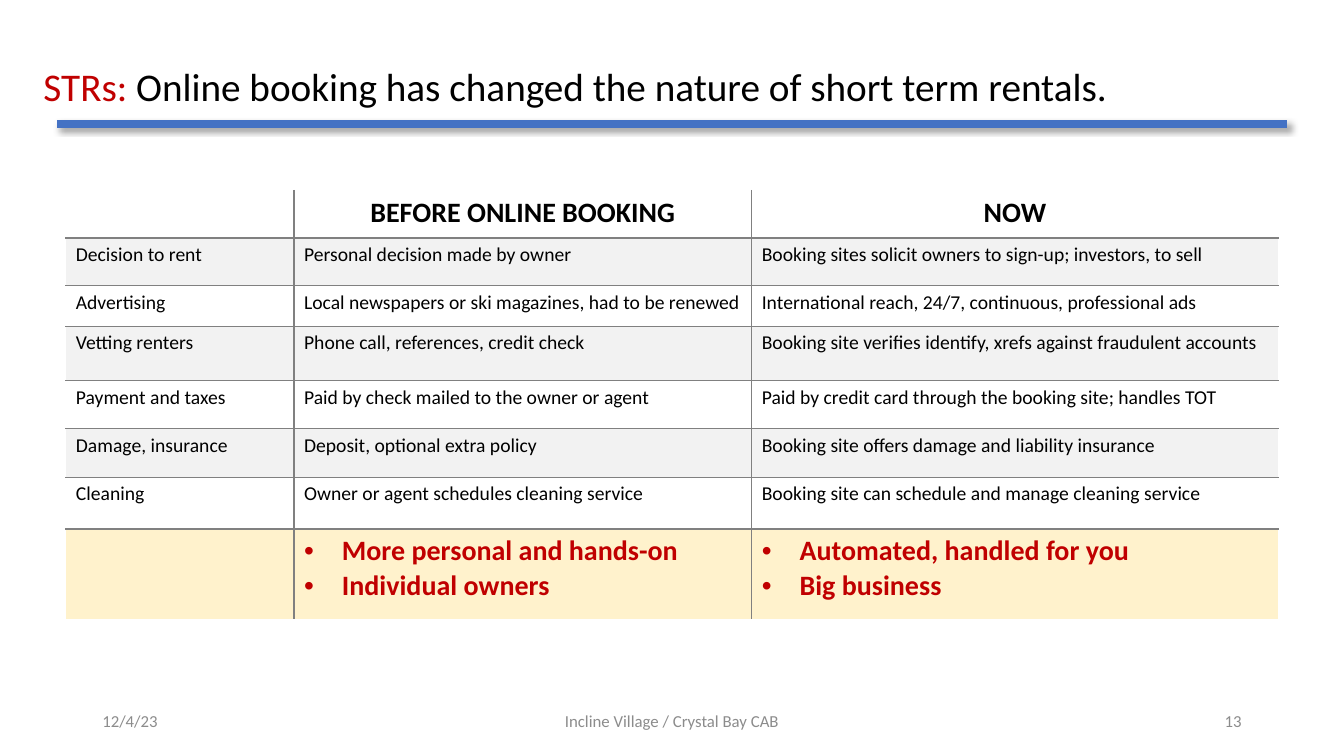
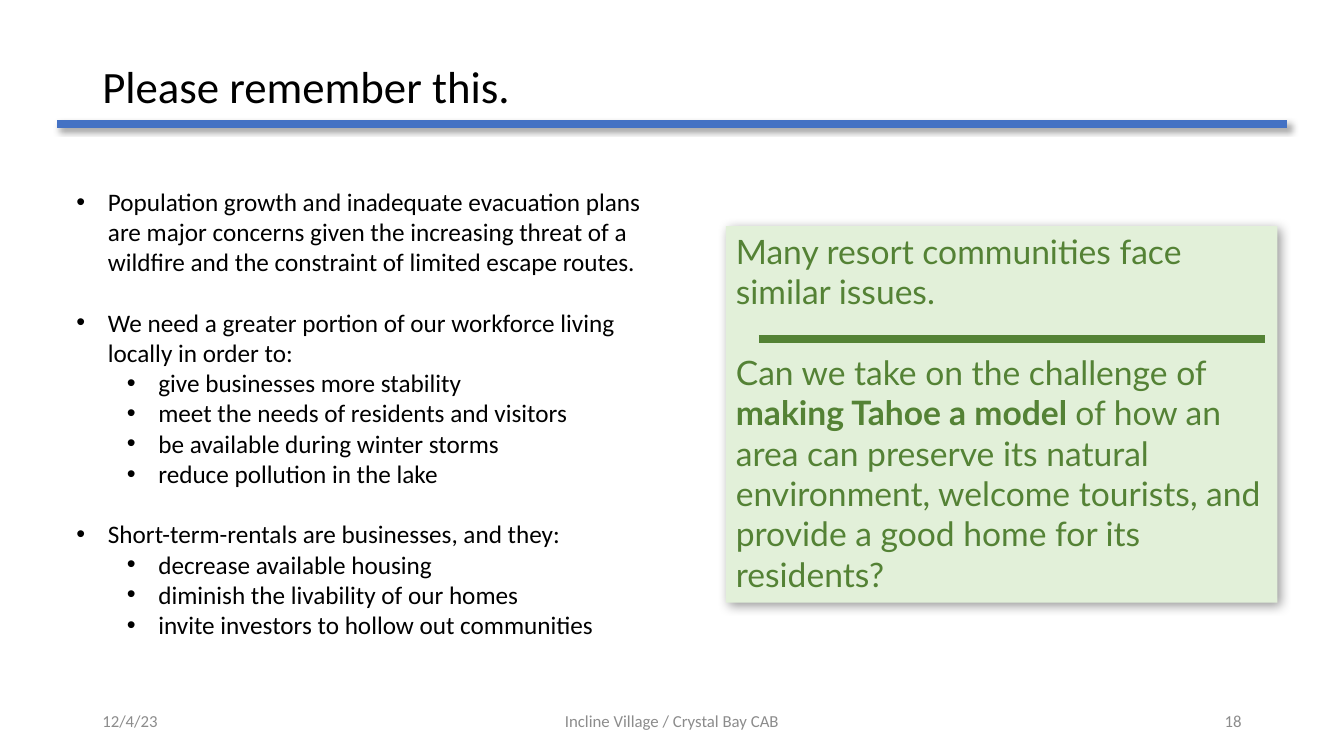
from lxml.etree import SubElement
from pptx import Presentation
from pptx.dml.color import RGBColor
from pptx.enum.shapes import MSO_CONNECTOR, MSO_SHAPE
from pptx.enum.text import MSO_ANCHOR, PP_ALIGN
from pptx.oxml.ns import qn
from pptx.util import Pt

COLOURS = {
    "text": "000000", "accent": "C00000", "rule": "4472C4", "footer": "8C8C8C",
    "grid": "808080", "white": "FFFFFF", "band": "F2F2F2", "summary": "FFF2CC",
    "panel": "E2F0D9", "green": "548235",
}
FOOTER_DATE = "12/4/23"
FOOTER_NAME = "Incline Village / Crystal Bay CAB"

COLUMN_WIDTHS = [163, 327, 376]
ROW_HEIGHTS = [34, 34, 29, 39, 34, 35, 37, 65]
COMPARISON = [
    ["", "BEFORE ONLINE BOOKING", "NOW"],
    ["Decision to rent", "Personal decision made by owner",
     "Booking sites solicit owners to sign-up; investors, to sell"],
    ["Advertising", "Local newspapers or ski magazines, had to be renewed",
     "International reach, 24/7, continuous, professional ads"],
    ["Vetting renters", "Phone call, references, credit check",
     "Booking site verifies identify, xrefs against fraudulent accounts"],
    ["Payment and taxes", "Paid by check mailed to the owner or agent",
     "Paid by credit card through the booking site; handles TOT"],
    ["Damage, insurance", "Deposit, optional extra policy",
     "Booking site offers damage and liability insurance"],
    ["Cleaning", "Owner or agent schedules cleaning service",
     "Booking site can schedule and manage cleaning service"],
    ["", "More personal and hands-on\nIndividual owners",
     "Automated, handled for you\nBig business"],
]
CONCERNS = [
    ("Population growth and inadequate evacuation plans are major concerns given "
     "the increasing threat of a wildfire and the constraint of limited escape routes.", []),
    ("We need a greater portion of our workforce living locally in order to:",
     ["give businesses more stability", "meet the needs of residents and visitors",
      "be available during winter storms", "reduce pollution in the lake"]),
    ("Short-term-rentals are businesses, and they:",
     ["decrease available housing", "diminish the livability of our homes",
      "invite investors to hollow out communities"]),
]


def colour(name):
    return RGBColor.from_string(COLOURS[name])


def style_font(font, size, colour_name="text", bold=False, name="Calibri"):
    font.name, font.size, font.bold = name, Pt(size), bold
    font.color.rgb = colour(colour_name)


def add_runs(paragraph, pieces, size, name="Calibri"):
    """Fill a paragraph from (text, colour, bold) pieces."""
    for text, colour_name, bold in pieces:
        run = paragraph.add_run()
        run.text = text
        style_font(run.font, size, colour_name, bold, name)


def add_bullet(paragraph, indent, hanging):
    properties = paragraph._p.get_or_add_pPr()
    properties.set("marL", str(Pt(indent)))
    properties.set("indent", str(-Pt(hanging)))
    SubElement(properties, qn("a:buFont"), typeface="Arial")
    SubElement(properties, qn("a:buChar"), char="•")


def add_text_box(slide, left, top, width, height, anchor=MSO_ANCHOR.MIDDLE):
    box = slide.shapes.add_textbox(Pt(left), Pt(top), Pt(width), Pt(height))
    text_frame = box.text_frame
    text_frame.word_wrap = True
    text_frame.vertical_anchor = anchor
    return text_frame


def add_shadow(effects, blur):
    shadow = SubElement(effects, qn("a:outerShdw"), blurRad=str(Pt(blur)),
                        dist=str(Pt(3)), dir=str(45 * 60000), algn="tl", rotWithShape="0")
    tint = SubElement(shadow, qn("a:srgbClr"), val=COLOURS["text"])
    SubElement(tint, qn("a:alpha"), val="40000")


def add_rule(shapes, left, right, y, colour_name, weight):
    """Draw a horizontal line and return its empty effect list."""
    rule = shapes.add_connector(MSO_CONNECTOR.STRAIGHT, Pt(left), Pt(y), Pt(right), Pt(y))
    rule.line.color.rgb = colour(colour_name)
    rule.line.width = Pt(weight)
    return SubElement(rule._element.spPr, qn("a:effectLst"))


def add_framed_slide(presentation, number, title, left, width, size):
    """Add a slide with the shared rule, title and footer."""
    slide = presentation.slides.add_slide(presentation.slide_layouts[6])
    add_shadow(add_rule(slide.shapes, 41, 919, 88.5, "rule", 5.5), 4)
    paragraph = add_text_box(slide, left, 11, width, 104.5).paragraphs[0]
    paragraph.line_spacing = 0.9
    add_runs(paragraph, title, size)

    footers = [(66, 216, FOOTER_DATE, PP_ALIGN.LEFT),
               (318, 324, FOOTER_NAME, PP_ALIGN.CENTER),
               (678, 216, str(number), PP_ALIGN.RIGHT)]
    for footer_left, footer_width, text, alignment in footers:
        paragraph = add_text_box(slide, footer_left, 500.5, footer_width, 29).paragraphs[0]
        paragraph.text = text
        paragraph.alignment = alignment
        style_font(paragraph.runs[0].font, 12, "footer")
    return slide


def set_borders(cell, inner_sides):
    """Draw grey lines inside the table and white ones on its edge."""
    properties = cell._tc.get_or_add_tcPr()
    for side in "LRTB":
        line = SubElement(properties, qn(f"a:ln{side}"), w=str(Pt(1)))
        fill = SubElement(line, qn("a:solidFill"))
        name = "grid" if side in inner_sides else "white"
        SubElement(fill, qn("a:srgbClr"), val=COLOURS[name])


def fill_cell(cell, text, row, column):
    last_row, last_column = len(COMPARISON) - 1, len(COLUMN_WIDTHS) - 1
    inner = {"L": column > 0, "R": column < last_column, "T": row > 0, "B": row < last_row}
    set_borders(cell, [side for side in inner if inner[side]])
    if row == last_row or row % 2:
        cell.fill.solid()
        cell.fill.fore_color.rgb = colour("summary" if row == last_row else "band")
    else:
        cell.fill.background()

    cell.text_frame.text = text
    for paragraph in cell.text_frame.paragraphs:
        if row == 0:
            paragraph.alignment = PP_ALIGN.CENTER
        if row == last_row and text:
            add_bullet(paragraph, 27, 27)
        emphasised = row in (0, last_row)
        style_font(paragraph.font, 20 if emphasised else 14,
                   "accent" if row == last_row else "text", emphasised)
        for run in paragraph.runs:
            style_font(run.font, 20 if emphasised else 14,
                       "accent" if row == last_row else "text", emphasised)


def add_comparison_table(slide):
    table = slide.shapes.add_table(
        len(ROW_HEIGHTS), len(COLUMN_WIDTHS), Pt(47), Pt(136),
        Pt(sum(COLUMN_WIDTHS)), Pt(sum(ROW_HEIGHTS))).table
    table.first_row = table.horz_banding = False
    for column, width in zip(table.columns, COLUMN_WIDTHS):
        column.width = Pt(width)
    for row, height in zip(table.rows, ROW_HEIGHTS):
        row.height = Pt(height)
    for row, texts in enumerate(COMPARISON):
        for column, text in enumerate(texts):
            fill_cell(table.cell(row, column), text, row, column)


def add_concerns(slide):
    text_frame = add_text_box(slide, 47.5, 129.5, 428, 356, MSO_ANCHOR.TOP)
    items = [(level, text) for heading, details in CONCERNS
             for level, text in [(0, heading)] + [(1, detail) for detail in details]]
    for index, (level, text) in enumerate(items):
        paragraph = text_frame.add_paragraph() if index else text_frame.paragraphs[0]
        paragraph.level = level
        if index and level == 0:
            paragraph.space_before = Pt(21.5)
        add_bullet(paragraph, 22.5 + 36 * level, 22.5)
        add_runs(paragraph, [(text, "text", False)], 18)


def add_challenge_panel(slide):
    group = slide.shapes.add_group_shape()
    panel = group.shapes.add_shape(MSO_SHAPE.RECTANGLE, Pt(518.5), Pt(161.5), Pt(394), Pt(269))
    panel.fill.solid()
    panel.fill.fore_color.rgb = colour("panel")
    panel.line.fill.background()
    panel.shadow.inherit = False
    add_shadow(panel._element.spPr.find(qn("a:effectLst")), 8)

    text_frame = panel.text_frame
    text_frame.word_wrap = True
    text_frame.vertical_anchor = MSO_ANCHOR.TOP
    statement, question = text_frame.paragraphs[0], text_frame.add_paragraph()
    statement.alignment = question.alignment = PP_ALIGN.LEFT
    question.space_before = Pt(28.8)
    add_runs(statement, [("Many resort communities face similar issues.", "green", False)],
             24, "Lato")
    add_runs(question, [
        ("Can we take on the challenge of ", "green", False),
        ("making Tahoe a model ", "green", True),
        ("of how an area can preserve its natural environment, welcome tourists, "
         "and provide a good home for its residents?", "green", False)], 24, "Lato")
    add_rule(group.shapes, 542, 903.5, 242, "green", 6)


def main():
    presentation = Presentation()
    presentation.slide_width, presentation.slide_height = Pt(960), Pt(540)

    # Booking comparison
    slide = add_framed_slide(presentation, 13, [
        ("STRs: ", "accent", False),
        ("Online booking has changed the nature of short term rentals.", "text", False),
    ], 24, 908, 28)
    add_comparison_table(slide)

    # Closing message
    slide = add_framed_slide(
        presentation, 18, [("Please remember this.", "text", False)], 66, 828, 32)
    add_concerns(slide)
    add_challenge_panel(slide)

    presentation.save("out.pptx")


if __name__ == "__main__":
    main()
